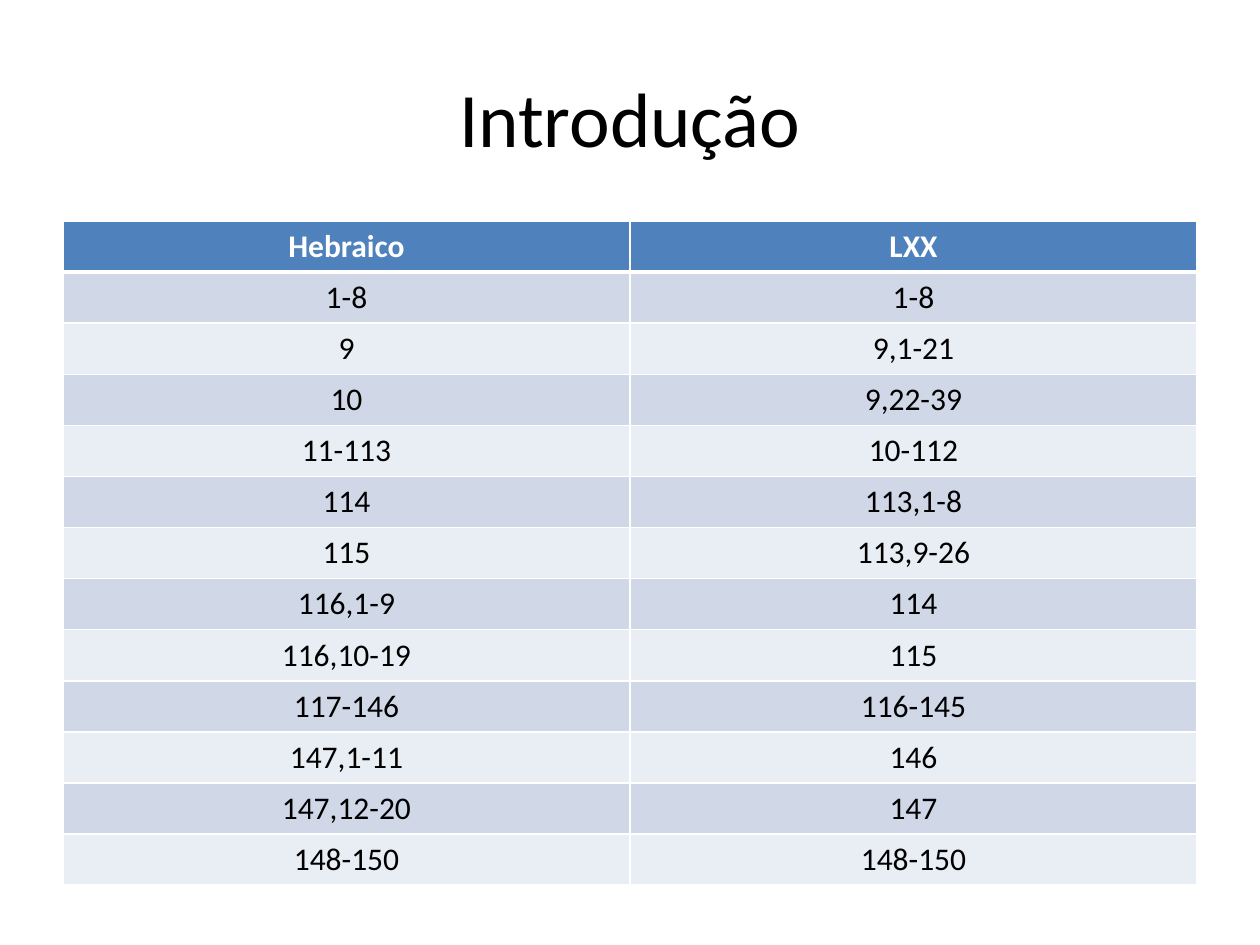
from pptx import Presentation
from pptx.dml.color import RGBColor
from pptx.enum.text import MSO_ANCHOR, PP_ALIGN
from pptx.oxml import parse_xml
from pptx.oxml.ns import nsdecls
from pptx.util import Pt

CENTER = PP_ALIGN.CENTER
MIDDLE = MSO_ANCHOR.MIDDLE
PX = 914400 / 126
FONT = "Calibri"
WHITE, BLACK, BLUE = "FFFFFF", "000000", "4F81BD"
BANDS = ("D0D8E8", "E9EDF4")

ROWS = [
    ("Hebraico", "LXX"),
    ("1-8", "1-8"),
    ("9", "9,1-21"),
    ("10", "9,22-39"),
    ("11-113", "10-112"),
    ("114", "113,1-8"),
    ("115", "113,9-26"),
    ("116,1-9", "114"),
    ("116,10-19", "115"),
    ("117-146", "116-145"),
    ("147,1-11", "146"),
    ("147,12-20", "147"),
    ("148-150", "148-150"),
]


def px(n):
    return round(n * PX)


def rgb(code):
    return RGBColor.from_string(code)


def write(frame, text, size, color, bold=False):
    para = frame.paragraphs[0]
    para.alignment = CENTER
    run = para.add_run()
    run.text = text
    font = run.font
    font.name, font.size, font.bold = FONT, Pt(size), bold
    font.color.rgb = rgb(color)


def edge(cell, side, width):
    """Draw one white border; call before the cell is filled."""
    cell._tc.get_or_add_tcPr().append(parse_xml(
        f'<a:{side} {nsdecls("a")} w="{Pt(width)}"><a:solidFill>'
        f'<a:srgbClr val="{WHITE}"/></a:solidFill></a:{side}>'))


def add_title(slide, box, text):
    title = slide.shapes.title
    title.left, title.top, title.width, title.height = map(px, box)
    title.text_frame.vertical_anchor = MIDDLE
    write(title.text_frame, text, 44, BLACK)


def add_grid(slide, box, rows):
    left, top, width, height = box
    count = len(rows[0])
    table = slide.shapes.add_table(len(rows), count, *map(px, box)).table
    for col in table.columns:
        col.width = px(width / count)
    for i, row in enumerate(rows):
        table.rows[i].height = px(height / len(rows))
        head = i == 0
        for j, text in enumerate(row):
            cell = table.cell(i, j)
            # The rule under the header is thicker
            for side in ("lnL", "lnR", "lnT", "lnB"):
                thick = (head and side == "lnB") or (i == 1 and side == "lnT")
                edge(cell, side, 3 if thick else 1)
            cell.fill.solid()
            cell.fill.fore_color.rgb = rgb(BLUE if head else BANDS[(i - 1) % 2])
            write(cell.text_frame, text, 18, WHITE if head else BLACK, head)


def main():
    deck = Presentation()
    deck.slide_width, deck.slide_height = px(1260), px(945)
    slide = deck.slides.add_slide(deck.slide_layouts[5])
    # Title above, psalm numbering table below
    add_title(slide, (63, 38, 1134, 158), "Introdução")
    add_grid(slide, (63, 221, 1134, 664), ROWS)
    deck.save("out.pptx")


if __name__ == "__main__":
    main()
